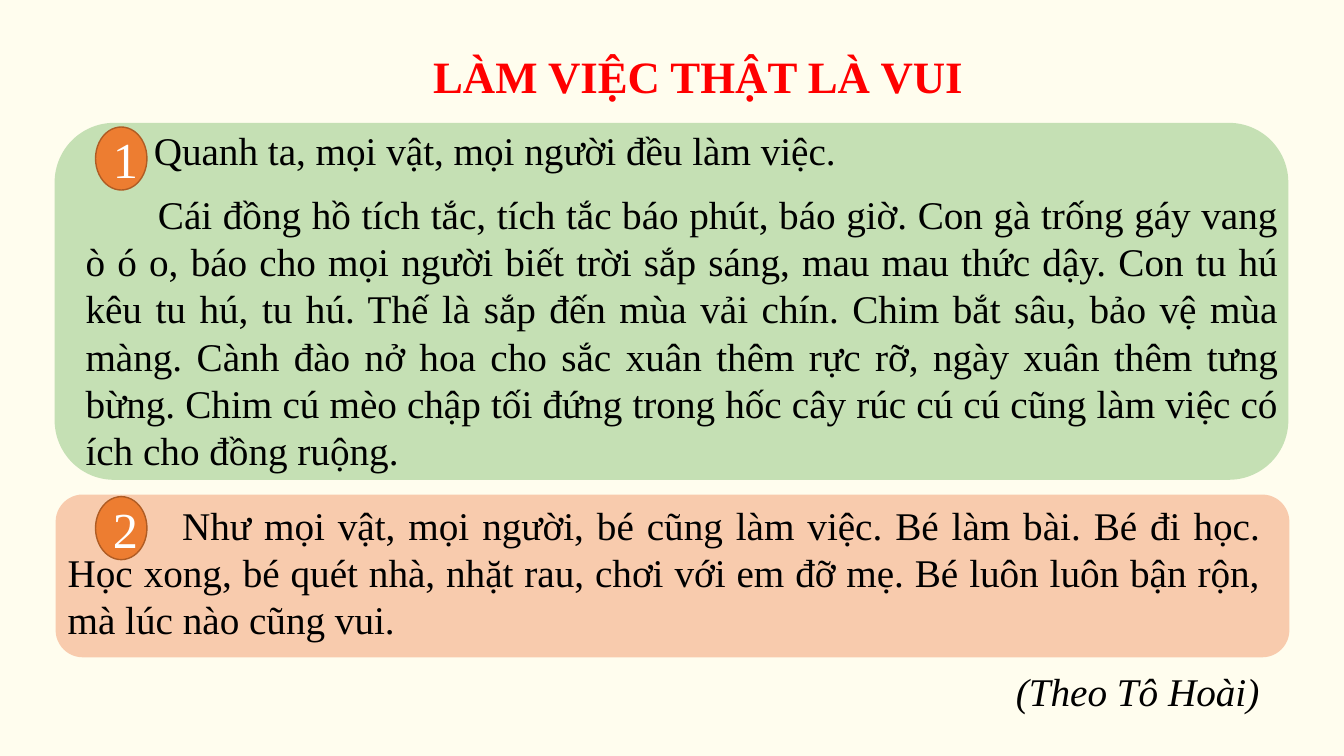
from dataclasses import dataclass

from pptx import Presentation
from pptx.dml.color import RGBColor as Rgb
from pptx.enum.shapes import MSO_SHAPE as Kind
from pptx.enum.text import PP_ALIGN as Align
from pptx.shapes.autoshape import Shape
from pptx.slide import Slide
from pptx.text.text import _Paragraph as Para
from pptx.util import Emu, Pt

SCALE = 9525


@dataclass(frozen=True)
class Theme:
    font: str = "Times New Roman"
    page: str = "FFFDEE"
    green: str = "C5E0B4"
    peach: str = "F8CBAD"
    orange: str = "ED7D31"
    rim: str = "AF5C24"
    ink: str = "000000"
    red: str = "FF0000"
    white: str = "FFFFFF"
    body: int = 28
    head: int = 32
    badge: int = 36
    gap: int = 12


@dataclass(frozen=True)
class Box:
    x: int
    y: int
    w: int
    h: int


@dataclass(frozen=True)
class Panel:
    box: Box
    fill: str


@dataclass(frozen=True)
class Line:
    text: str
    align: Align = Align.LEFT
    margin: int = 0
    indent: int = 0
    after: int = 0
    size: int = Theme.body
    color: str = Theme.ink
    bold: bool = False
    italic: bool = False


@dataclass(frozen=True)
class Block:
    box: Box
    lines: tuple[Line, ...]


@dataclass(frozen=True)
class Badge:
    text: str
    y: int


THEME = Theme()


def px(n: int) -> Emu:
    return Emu(n * SCALE)


def place(box: Box) -> tuple[Emu, Emu, Emu, Emu]:
    return px(box.x), px(box.y), px(box.w), px(box.h)


def verse(text: str, indent: int, align: Align = Align.JUSTIFY) -> Line:
    return Line(text, align, margin=3, indent=indent, after=THEME.gap)


PANELS = (
    Panel(Box(53, 471, 1175, 155), THEME.peach),
    Panel(Box(52, 117, 1175, 340), THEME.green),
)
BLOCKS = (
    Block(Box(69, 116, 1158, 343), (
        verse("Quanh ta, mọi vật, mọi người đều làm việc.", 65, Align.LEFT),
        verse(
            "Cái đồng hồ tích tắc, tích tắc báo phút, báo giờ. "
            "Con gà trống gáy vang ò ó o, báo cho mọi người biết trời sắp sáng, "
            "mau mau thức dậy. Con tu hú kêu tu hú, tu hú. "
            "Thế là sắp đến mùa vải chín. Chim bắt sâu, bảo vệ mùa màng. "
            "Cành đào nở hoa cho sắc xuân thêm rực rỡ, "
            "ngày xuân thêm tưng bừng. Chim cú mèo chập tối đứng trong hốc cây "
            "rúc cú cú cũng làm việc có ích cho đồng ruộng.", 69),
    )),
    Block(Box(52, 473, 1158, 206), (
        verse(
            "Như mọi vật, mọi người, bé cũng làm việc. Bé làm bài. Bé đi học. "
            "Học xong, bé quét nhà, nhặt rau, chơi với em đỡ mẹ. "
            "Bé luôn luôn bận rộn, mà lúc nào cũng vui.", 109),
    )),
    Block(Box(131, 42, 1068, 61), (
        Line("LÀM VIỆC THẬT LÀ VUI", Align.CENTER,
             size=THEME.head, color=THEME.red, bold=True),
    )),
    Block(Box(958, 631, 314, 80), (Line("(Theo Tô Hoài)", italic=True),)),
)
BADGES = (Badge("2", 473), Badge("1", 121))


def write(para: Para, line: Line) -> None:
    para.text = line.text
    para.alignment = line.align
    para.space_after = Pt(line.after)
    props = para._p.get_or_add_pPr()
    props.set("marL", str(px(line.margin)))
    props.set("indent", str(px(line.indent)))
    for run in para.runs:
        font = run.font
        font.name = THEME.font
        font.size = Pt(line.size)
        font.bold = line.bold
        font.italic = line.italic
        font.color.rgb = Rgb.from_string(line.color)


def draw_shape(slide: Slide, kind: Kind, box: Box, fill: str) -> Shape:
    shape = slide.shapes.add_shape(kind, *place(box))
    shape.shadow.inherit = False
    shape.fill.solid()
    shape.fill.fore_color.rgb = Rgb.from_string(fill)
    shape.line.fill.background()
    return shape


def draw_block(slide: Slide, block: Block) -> None:
    frame = slide.shapes.add_textbox(*place(block.box)).text_frame
    frame.word_wrap = True
    for i, line in enumerate(block.lines):
        write(frame.add_paragraph() if i else frame.paragraphs[0], line)


def draw_badge(slide: Slide, badge: Badge) -> None:
    shape = draw_shape(slide, Kind.OVAL, Box(91, badge.y, 49, 60), THEME.orange)
    shape.line.color.rgb = Rgb.from_string(THEME.rim)
    shape.line.width = Pt(1)
    write(shape.text_frame.paragraphs[0],
          Line(badge.text, Align.CENTER, size=THEME.badge, color=THEME.white))


def main() -> None:
    deck = Presentation()
    deck.slide_width, deck.slide_height = px(1280), px(720)
    slide = deck.slides.add_slide(deck.slide_layouts[6])
    slide.background.fill.solid()
    slide.background.fill.fore_color.rgb = Rgb.from_string(THEME.page)
    for panel in PANELS:
        draw_shape(slide, Kind.ROUNDED_RECTANGLE, panel.box, panel.fill)
    for block in BLOCKS:
        draw_block(slide, block)
    for badge in BADGES:
        draw_badge(slide, badge)
    deck.save("out.pptx")


if __name__ == "__main__":
    main()
